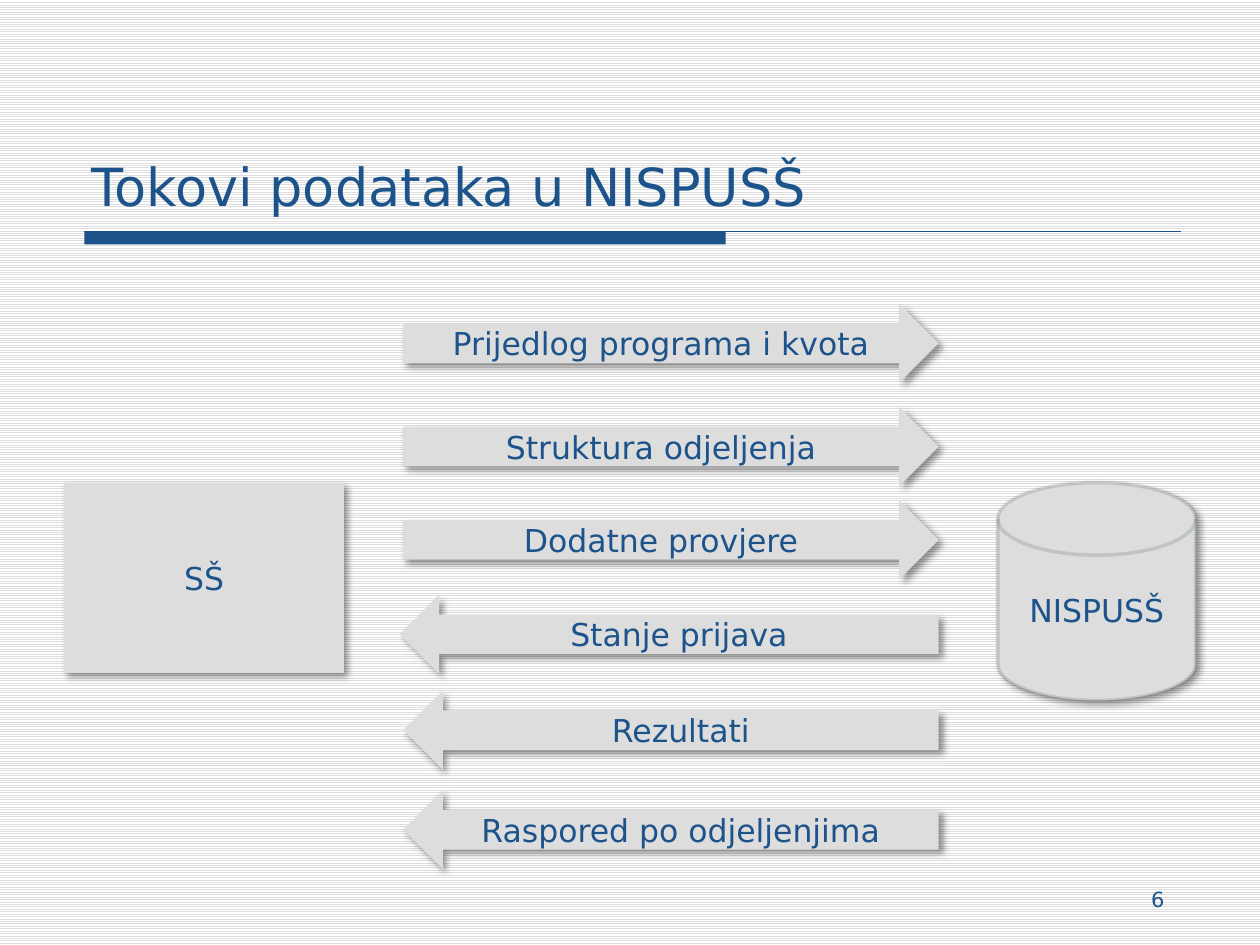
from dataclasses import dataclass

from lxml.etree import SubElement
from pptx import Presentation
from pptx.dml.color import RGBColor
from pptx.enum.dml import MSO_PATTERN
from pptx.enum.shapes import MSO_CONNECTOR, MSO_SHAPE
from pptx.enum.text import MSO_ANCHOR, PP_ALIGN
from pptx.oxml.ns import qn
from pptx.util import Inches, Pt

WIDTH, HEIGHT = Inches(10), Inches(7.5)
COLUMNS, ROWS = 100, 75
BLUE, GREY, WHITE, BLACK, SLATE = "1D538B", "DDDDDD", "FFFFFF", "000000", "79848F"
FONT = "DejaVu Sans"


@dataclass(frozen=True)
class Area:
    """A region in grid columns and rows."""
    column: float
    row: float
    columns: float
    rows: float

    def lengths(self) -> tuple[int, int, int, int]:
        """Return left, top, width and height in slide units."""
        return (across(self.column), down(self.row),
                across(self.columns), down(self.rows))


@dataclass(frozen=True)
class Node:
    """A labelled figure of the data flow diagram."""
    label: str
    figure: MSO_SHAPE
    area: Area


@dataclass(frozen=True)
class Caption:
    """A line of text standing directly on the slide."""
    words: str
    area: Area
    size: int
    align: PP_ALIGN
    anchor: MSO_ANCHOR


def across(columns: float) -> int:
    """Convert grid columns to a horizontal length."""
    return round(WIDTH * columns / COLUMNS)


def down(rows: float) -> int:
    """Convert grid rows to a vertical length."""
    return round(HEIGHT * rows / ROWS)


def color(code: str) -> RGBColor:
    """Turn a hex string into a colour."""
    return RGBColor.from_string(code)


def apply(target, formats: dict) -> None:
    """Set every attribute named in the format values."""
    for name, setting in formats.items():
        setattr(target, name, setting)


def write(frame, words: str, size: int, align: PP_ALIGN, anchor: MSO_ANCHOR) -> None:
    """Write one formatted paragraph into a text frame."""
    apply(frame, {"word_wrap": True, "vertical_anchor": anchor})
    paragraph = frame.paragraphs[0]
    apply(paragraph, {"text": words, "alignment": align})
    font = paragraph.runs[0].font
    apply(font, {"name": FONT, "size": Pt(size)})
    font.color.rgb = color(BLUE)


def set_alpha(color_element, percent: int) -> None:
    """Give a colour element an opacity."""
    SubElement(color_element, qn("a:alpha"), val=str(percent * 1000))


def cast_shadow(shape) -> None:
    """Add a soft shadow to the lower right."""
    shape.shadow.inherit = False
    effects = shape._element.spPr.find(qn("a:effectLst"))
    shadow = SubElement(effects, qn("a:outerShdw"), blurRad=str(Pt(4)),
                        dist=str(Pt(3)), dir=str(45 * 60000),
                        algn="tl", rotWithShape="0")
    set_alpha(SubElement(shadow, qn("a:srgbClr"), val=BLACK), 40)


def draw_figure(slide, figure: MSO_SHAPE, area: Area, fill: str):
    """Draw a filled figure without outline or shadow."""
    shape = slide.shapes.add_shape(figure, *area.lengths())
    shape.shadow.inherit = False
    shape.fill.solid()
    shape.fill.fore_color.rgb = color(fill)
    shape.line.fill.background()
    return shape


def draw_node(slide, node: Node):
    """Draw a labelled grey figure with its shadow."""
    shape = draw_figure(slide, node.figure, node.area, GREY)
    cast_shadow(shape)
    write(shape.text_frame, node.label, 18, PP_ALIGN.CENTER, MSO_ANCHOR.MIDDLE)
    return shape


def draw_database(slide, node: Node) -> None:
    """Draw the data store with a translucent outline."""
    line = draw_node(slide, node).line
    line.color.rgb = color(SLATE)
    line.width = Pt(2)
    outline = line._ln.find(qn("a:solidFill")).find(qn("a:srgbClr"))
    set_alpha(outline, 27)


def draw_caption(slide, caption: Caption) -> None:
    """Place a caption on the slide."""
    box = slide.shapes.add_textbox(*caption.area.lengths())
    write(box.text_frame, caption.words, caption.size, caption.align, caption.anchor)


def draw_title_rule(slide, bar: Area, right: float) -> None:
    """Draw the thick bar and the thin rule below the title."""
    draw_figure(slide, MSO_SHAPE.RECTANGLE, bar, BLUE)
    left, top = bar.lengths()[:2]
    rule = slide.shapes.add_connector(MSO_CONNECTOR.STRAIGHT, left, top, across(right), top)
    rule.line.color.rgb = color(BLUE)
    rule.line.width = Pt(0.75)
    SubElement(rule._element.spPr, qn("a:effectLst"))


def paint_background(slide) -> None:
    """Fill the background with fine horizontal lines."""
    fill = slide.background.fill
    fill.patterned()
    fill.pattern = MSO_PATTERN.LIGHT_HORIZONTAL
    fill.fore_color.rgb = color(GREY)
    fill.back_color.rgb = color(WHITE)


def flow(label: str, row: float, figure: MSO_SHAPE, column: float = 32) -> Node:
    """Describe a flow arrow that ends at the shared right edge."""
    return Node(label, figure, Area(column, row, 74.5 - column, 6.3))


CAPTIONS = (
    Caption("Tokovi podataka u NISPUSŠ", Area(6.3, 12.3, 87.5, 5.4), 30,
            PP_ALIGN.LEFT, MSO_ANCHOR.BOTTOM),
    Caption("6", Area(71.7, 69.9, 21.7, 3.9), 12, PP_ALIGN.RIGHT, MSO_ANCHOR.TOP),
)
SCHOOL = Node("SŠ", MSO_SHAPE.RECTANGLE, Area(5.1, 38.3, 22.2, 15.1))
DATABASE = Node("NISPUSŠ", MSO_SHAPE.FLOWCHART_MAGNETIC_DISK, Area(79.2, 38.3, 15.7, 17.3))
FLOWS = (
    flow("Prijedlog programa i kvota", 24.1, MSO_SHAPE.RIGHT_ARROW),
    flow("Struktura odjeljenja", 32.3, MSO_SHAPE.RIGHT_ARROW),
    flow("Dodatne provjere", 39.7, MSO_SHAPE.RIGHT_ARROW),
    flow("Stanje prijava", 47.2, MSO_SHAPE.LEFT_ARROW, 31.7),
    flow("Rezultati", 54.8, MSO_SHAPE.LEFT_ARROW),
    flow("Raspored po odjeljenjima", 62.7, MSO_SHAPE.LEFT_ARROW),
)


def main() -> None:
    """Build the slide and save it."""
    deck = Presentation()
    apply(deck, {"slide_width": WIDTH, "slide_height": HEIGHT})
    slide = deck.slides.add_slide(deck.slide_layouts[6])
    paint_background(slide)
    draw_title_rule(slide, Area(6.7, 18.4, 50.9, 1), 93.7)
    for caption in CAPTIONS:
        draw_caption(slide, caption)
    draw_database(slide, DATABASE)
    for node in (SCHOOL, *FLOWS):
        draw_node(slide, node)
    deck.save("out.pptx")


if __name__ == "__main__":
    main()
